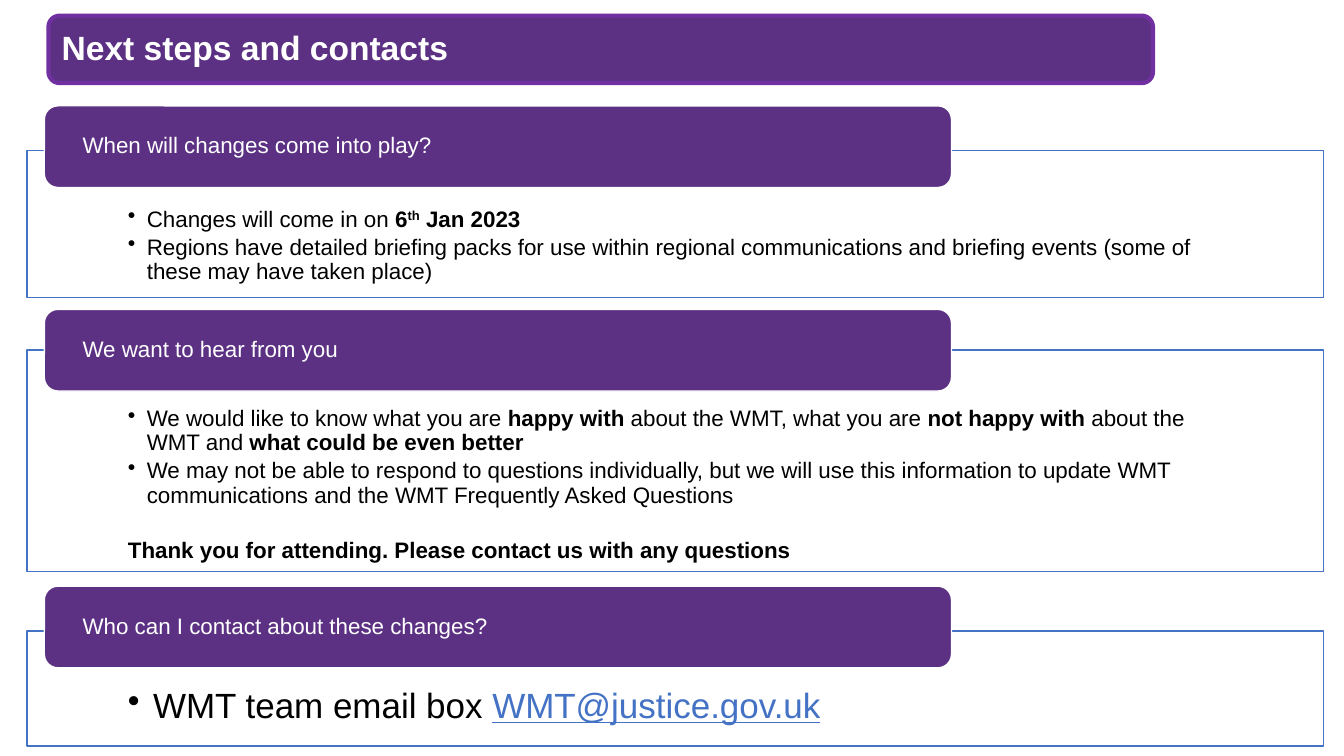
from lxml.etree import SubElement
from pptx import Presentation
from pptx.dml.color import RGBColor
from pptx.enum.shapes import MSO_SHAPE as Preset
from pptx.enum.text import MSO_ANCHOR as Anchor, PP_ALIGN as Align
from pptx.oxml.ns import qn
from pptx.util import Pt

PURPLE = RGBColor(0x5C, 0x31, 0x83)
VIOLET = RGBColor(0x70, 0x30, 0xA0)
BLUE = RGBColor(0x44, 0x72, 0xC4)
WHITE = RGBColor(0xFF, 0xFF, 0xFF)
BLACK = RGBColor(0, 0, 0)

BOLD = {"bold": True}
LINK = {"color": BLUE, "underline": True}
SUPERSCRIPT = {"bold": True, "baseline": 30000}

SECTIONS = [
    {
        "heading": "When will changes come into play?",
        "heading_top": 75.6, "top": 107.4, "height": 105, "size": 16, "indent": 13.5,
        "items": [
            {"runs": [("Changes will come in on ", {}), ("6", BOLD),
                      ("th", SUPERSCRIPT), (" Jan 2023", BOLD)]},
            {"runs": [("Regions have detailed briefing packs for use within regional "
                       "communications and briefing events (some of these may have "
                       "taken place)", {})]},
        ],
    },
    {
        "heading": "We want to hear from you",
        "heading_top": 221, "top": 250, "height": 158.2, "size": 16, "indent": 13.5,
        "items": [
            {"runs": [("We would like to know what you are ", {}), ("happy with", BOLD),
                      (" about the WMT, what you are ", {}), ("not happy with ", BOLD),
                      ("about the WMT and ", {}), ("what could be even better", BOLD)]},
            {"runs": [("We may not be able to respond to questions individually, but we "
                       "will use this information to update WMT communications and the "
                       "WMT Frequently Asked Questions", {})]},
            {"runs": [("Thank you for attending. Please contact us with any questions",
                       BOLD)],
             "bullet": False, "before": 19.4},
        ],
    },
    {
        "heading": "Who can I contact about these changes?",
        "heading_top": 418.7, "top": 450.8, "height": 82, "size": 25, "indent": 18,
        "items": [
            {"runs": [("WMT team email box ", {}), ("WMT@justice.gov.uk", LINK)]},
        ],
    },
]


def set_format(target, values):
    for name, value in values.items():
        setattr(target, name, value)


def add_box(slide, preset, bounds, fill, line, width, margins, anchor):
    shape = slide.shapes.add_shape(preset, *map(Pt, bounds))
    shape.shadow.inherit = False
    shape.fill.solid()
    shape.fill.fore_color.rgb = fill
    shape.line.color.rgb = line
    shape.line.width = Pt(width)
    left, top, right, bottom = map(Pt, margins)
    set_format(shape.text_frame, {
        "word_wrap": True, "vertical_anchor": anchor, "margin_left": left,
        "margin_top": top, "margin_right": right, "margin_bottom": bottom,
    })
    return shape.text_frame


def add_run(paragraph, text, size, color, style):
    run = paragraph.add_run()
    run.text = text
    set_format(run.font, {
        "name": "Arial", "size": Pt(size), "bold": style.get("bold", False),
        "underline": style.get("underline", False),
    })
    run.font.color.rgb = style.get("color", color)
    if "baseline" in style:
        run._r.get_or_add_rPr().set("baseline", str(style["baseline"]))


def set_indent(paragraph, indent, bullet):
    properties = paragraph._p.get_or_add_pPr()
    properties.set("marL", str(Pt(indent)))
    properties.set("indent", str(-Pt(indent)))
    if bullet:
        SubElement(properties, qn("a:buChar")).set("char", "•")
    else:
        SubElement(properties, qn("a:buNone"))


def add_banner(slide, text, bounds, line, width, margins, size, bold):
    frame = add_box(slide, Preset.ROUNDED_RECTANGLE, bounds, PURPLE, line, width,
                    margins, Anchor.MIDDLE)
    paragraph = frame.paragraphs[0]
    set_format(paragraph, {"alignment": Align.LEFT, "line_spacing": 0.9})
    add_run(paragraph, text, size, WHITE, {"bold": bold})


def add_panel(slide, section):
    bounds = (19.4, section["top"], 926, section["height"])
    frame = add_box(slide, Preset.RECTANGLE, bounds, WHITE, BLUE, 1,
                    (72, 41, 72, 8.6), Anchor.TOP)
    for index, item in enumerate(section["items"]):
        paragraph = frame.add_paragraph() if index else frame.paragraphs[0]
        set_indent(paragraph, section["indent"], item.get("bullet", True))
        set_format(paragraph, {
            "alignment": Align.LEFT, "line_spacing": 0.9,
            "space_before": Pt(item.get("before", 0)),
            "space_after": Pt(section["size"] * 0.17),
        })
        for text, style in item["runs"]:
            add_run(paragraph, text, section["size"], BLACK, style)


def main():
    presentation = Presentation()
    set_format(presentation, {"slide_width": Pt(960), "slide_height": Pt(540)})
    slide = presentation.slides.add_slide(presentation.slide_layouts[6])
    for section in SECTIONS:
        add_panel(slide, section)
        add_banner(slide, section["heading"], (31.7, section["heading_top"], 648, 58.3),
                   WHITE, 1, (24.5, 0, 24.5, 0), 16, False)
    add_banner(slide, "Next steps and contacts", (34.6, 11.2, 789, 48.2),
               VIOLET, 3, (7.2, 7.2, 7.2, 7.2), 24, True)
    presentation.save("out.pptx")


if __name__ == "__main__":
    main()
